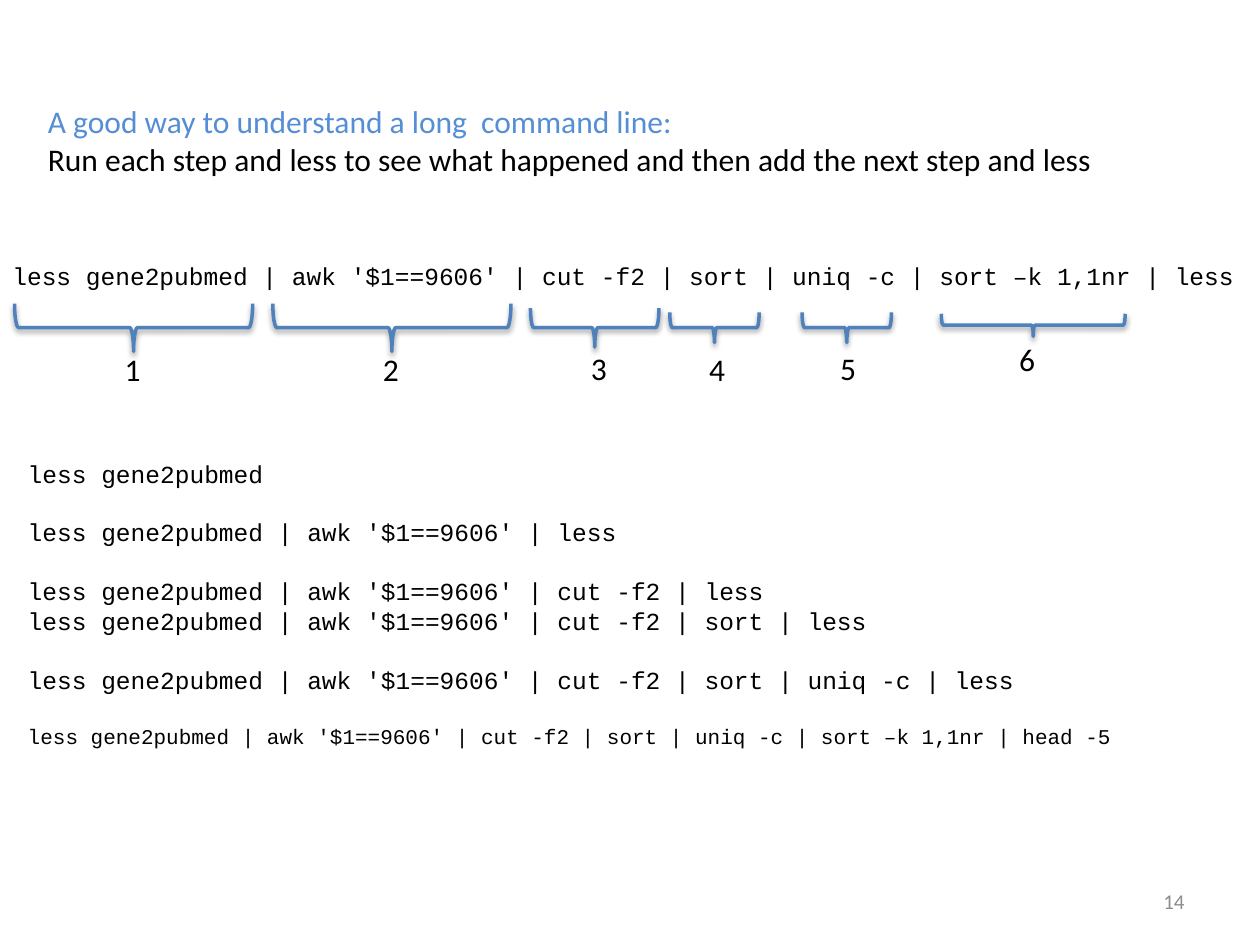
"""Build the slide that explains a long command line step by step."""
from dataclasses import dataclass

from lxml import etree
from pptx import Presentation
from pptx.dml.color import RGBColor
from pptx.enum.shapes import MSO_SHAPE
from pptx.enum.text import MSO_ANCHOR, MSO_AUTO_SIZE, PP_ALIGN
from pptx.oxml import parse_xml
from pptx.oxml.ns import nsdecls, qn
from pptx.util import Inches, Pt

BRACE = MSO_SHAPE.RIGHT_BRACE
TOP, MIDDLE = MSO_ANCHOR.TOP, MSO_ANCHOR.MIDDLE
LEFT, RIGHT = PP_ALIGN.LEFT, PP_ALIGN.RIGHT
NO_AUTOFIT = MSO_AUTO_SIZE.NONE

BLACK = RGBColor(0x00, 0x00, 0x00)
GREY = RGBColor(0x8C, 0x8C, 0x8C)
HEADING_BLUE = RGBColor(0x55, 0x8E, 0xD5)
BRACE_BLUE = RGBColor(0x4F, 0x81, 0xBD)

PROSE, CODE = "Calibri", "Courier New"
LINE_GAP = 16.8
SHADOW = (
    f'<a:effectLst {nsdecls("a")}><a:outerShdw blurRad="40000" dist="20000" '
    'dir="5400000" rotWithShape="0"><a:srgbClr val="000000">'
    '<a:alpha val="38000"/></a:srgbClr></a:outerShdw></a:effectLst>'
)


@dataclass(frozen=True)
class Line:
    text: str
    size: float = 14
    color: RGBColor = BLACK
    gap: float = 0


@dataclass(frozen=True)
class Step:
    command: str
    center_x: float
    center_y: float
    span: float
    depth: float
    label_left: float
    label_top: float
    label_width: float = 0.34


STEPS = [
    Step("less gene2pubmed", 1.06, 2.6, 1.89, 0.38, 0.89, 2.73),
    Step("awk '$1==9606'", 3.11, 2.6, 1.89, 0.38, 2.94, 2.73),
    Step("cut -f2", 4.72, 2.6, 1.02, 0.31, 4.59, 2.72, 0.49),
    Step("sort", 5.67, 2.6, 0.71, 0.24, 5.53, 2.73),
    Step("uniq -c", 6.72, 2.6, 0.71, 0.24, 6.57, 2.72),
    Step("sort –k 1,1nr", 8.2, 2.58, 1.46, 0.18, 7.99, 2.65),
]


def pipeline(count: int, *ending: str) -> str:
    """Join the first steps and an ending with pipes."""
    return " | ".join([step.command for step in STEPS[:count]] + list(ending))


def write_text(shape, lines: list[Line], *, font: str = PROSE, align=LEFT,
               anchor=TOP, wrap: bool = True) -> None:
    """Fill a shape with plain unbulleted lines."""
    frame = shape.text_frame
    frame.word_wrap = wrap
    frame.auto_size = NO_AUTOFIT
    frame.vertical_anchor = anchor
    for index, line in enumerate(lines):
        paragraph = frame.add_paragraph() if index else frame.paragraphs[0]
        paragraph.alignment = align
        paragraph.space_before = Pt(line.gap)
        properties = paragraph._p.get_or_add_pPr()
        properties.set("marL", "0")
        properties.set("indent", "0")
        etree.SubElement(properties, qn("a:buNone"))
        run = paragraph.add_run()
        run.text = line.text
        run.font.name = font
        run.font.size = Pt(line.size)
        run.font.color.rgb = line.color


def place(shape, left: float, top: float, width: float, height: float) -> None:
    """Move and size a placeholder."""
    shape.left, shape.top = Inches(left), Inches(top)
    shape.width, shape.height = Inches(width), Inches(height)


def add_box(slide, left: float, top: float, width: float, height: float):
    """Add an empty text box."""
    return slide.shapes.add_textbox(
        Inches(left), Inches(top), Inches(width), Inches(height))


def add_step(slide, number: int, step: Step) -> None:
    """Draw the brace under a step and its number."""
    brace = slide.shapes.add_shape(
        BRACE,
        Inches(step.center_x - step.depth / 2),
        Inches(step.center_y - step.span / 2),
        Inches(step.depth), Inches(step.span))
    brace.rotation = 90
    brace.fill.background()
    brace.line.color.rgb = BRACE_BLUE
    brace.line.width = Pt(2)
    brace._element.spPr.append(parse_xml(SHADOW))
    label = add_box(slide, step.label_left, step.label_top, step.label_width, 0.4)
    write_text(label, [Line(str(number), 18)])


def main() -> None:
    """Build and save the slide."""
    presentation = Presentation()
    presentation.slide_width, presentation.slide_height = Inches(10), Inches(7.5)
    slide = presentation.slides.add_slide(presentation.slide_layouts[1])

    heading = slide.shapes.title
    place(heading, 0.28, 0.76, 8.53, 0.71)
    write_text(heading, [
        Line("A good way to understand a long  command line:", 18, HEADING_BLUE),
        Line("Run each step and less to see what happened and then add "
             "the next step and less", 18),
    ], wrap=False)

    progress = slide.placeholders[1]
    place(progress, 0.12, 3.59, 9.69, 2.42)
    write_text(progress, [
        Line(pipeline(1)),
        Line(pipeline(2, "less"), gap=LINE_GAP),
        Line(pipeline(3, "less"), gap=LINE_GAP),
        Line(pipeline(4, "less")),
        Line(pipeline(5, "less"), gap=LINE_GAP),
        Line(pipeline(6, "head -5"), 12, gap=LINE_GAP),
    ], font=CODE)

    full_command = add_box(slide, 0, 2.02, 10, 0.34)
    write_text(full_command, [Line(pipeline(6, "less"))], font=CODE)
    for number, step in enumerate(STEPS, start=1):
        add_step(slide, number, step)

    page_number = add_box(slide, 7.17, 6.95, 2.33, 0.4)
    write_text(page_number, [Line("14", 12, GREY)], align=RIGHT, anchor=MIDDLE)

    presentation.save("out.pptx")


if __name__ == "__main__":
    main()
